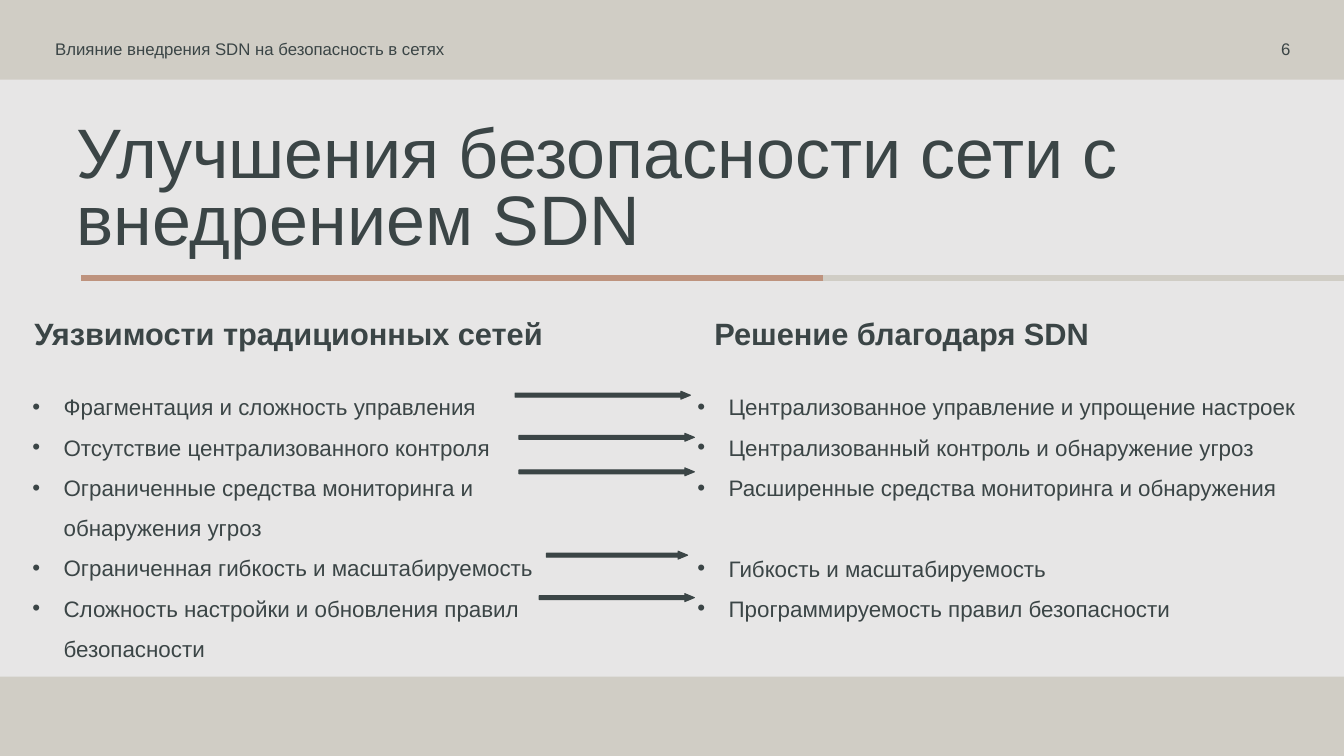
from lxml import etree
from pptx import Presentation
from pptx import util as u
from pptx.dml import color
from pptx.enum import shapes, text
from pptx.oxml import ns

INK, SAND, PAPER, CLAY = "3B4546", "D0CDC5", "E7E6E6", "BE937E"
FONT = "Arial"

RISKS = [
    "Фрагментация и сложность управления",
    "Отсутствие централизованного контроля",
    "Ограниченные средства мониторинга и обнаружения угроз",
    "Ограниченная гибкость и масштабируемость",
    "Сложность настройки и обновления правил безопасности",
]
SOLUTIONS = [
    "Централизованное управление и упрощение настроек",
    "Централизованный контроль и обнаружение угроз",
    "Расширенные средства мониторинга и обнаружения",
    "Гибкость и масштабируемость",
    "Программируемость правил безопасности",
]
ARROWS = [
    (12.98, 9.86, 4.42),
    (13.08, 10.92, 4.42),
    (13.08, 11.79, 4.42),
    (13.77, 13.89, 3.56),
    (13.59, 14.96, 3.91),
]


def paint(fmt, hex_color):
    """Give a fill a solid colour."""
    fmt.solid()
    fmt.fore_color.rgb = color.RGBColor.from_string(hex_color)


def place(sp, left, top, width, height):
    """Move and size a shape, in centimetres."""
    sp.left, sp.top = u.Cm(left), u.Cm(top)
    sp.width, sp.height = u.Cm(width), u.Cm(height)


def write(p, words, size, bold=False, align=text.PP_ALIGN.LEFT, spacing=1.0, after=0):
    """Put one formatted run into a paragraph."""
    p.alignment, p.line_spacing = align, spacing
    p.space_before, p.space_after = u.Pt(0), u.Pt(after)
    r = p.add_run()
    r.text = words
    r.font.name, r.font.size, r.font.bold = FONT, u.Pt(size), bold
    paint(r.font.fill, INK)


def set_frame(sp, anchor):
    """Make a text frame wrap at a fixed size and return it."""
    tf = sp.text_frame
    tf.word_wrap = True
    tf.auto_size = text.MSO_AUTO_SIZE.NONE
    tf.vertical_anchor = anchor
    return tf


def add_bullet(p):
    """Give a paragraph a hanging round bullet."""
    pPr = p._p.get_or_add_pPr()
    pPr.set("marL", str(u.Cm(0.79)))
    pPr.set("indent", str(-u.Cm(0.79)))
    clr = etree.SubElement(pPr, ns.qn("a:buClr"))
    etree.SubElement(clr, ns.qn("a:srgbClr"), val=INK)
    etree.SubElement(pPr, ns.qn("a:buFont"), typeface=FONT)
    etree.SubElement(pPr, ns.qn("a:buChar"), char="•")


def fill_text(sp, box, words, size, **fmt):
    """Place a placeholder and write its single paragraph."""
    place(sp, *box)
    tf = set_frame(sp, text.MSO_ANCHOR.TOP)
    write(tf.paragraphs[0], words, size, **fmt)


def fill_list(sp, box, items, gaps=None):
    """Place a placeholder and write a bulleted list, with extra gaps by item index."""
    place(sp, *box)
    tf = set_frame(sp, text.MSO_ANCHOR.TOP)
    for i, item in enumerate(items):
        p = tf.paragraphs[0] if i == 0 else tf.add_paragraph()
        write(p, item, 16, spacing=1.5, after=(gaps or {}).get(i, 0))
        add_bullet(p)


def add_label(s, box, words, align):
    """Add a small header text box."""
    sp = s.shapes.add_textbox(*map(u.Cm, box))
    tf = set_frame(sp, text.MSO_ANCHOR.MIDDLE)
    write(tf.paragraphs[0], words, 12, align=align)


def add_block(s, kind, box, fill):
    """Add a filled preset shape without outline or shadow."""
    sp = s.shapes.add_shape(kind, *map(u.Cm, box))
    sp.shadow.inherit = False
    paint(sp.fill, fill)
    sp.line.fill.background()
    return sp


def add_rule(s, x1, x2, y, hex_color):
    """Add a thick horizontal line."""
    ln = s.shapes.add_connector(
        shapes.MSO_CONNECTOR.STRAIGHT, u.Cm(x1), u.Cm(y), u.Cm(x2), u.Cm(y))
    ln.line.width = u.Pt(4.5)
    paint(ln.line.fill, hex_color)
    etree.SubElement(ln._element.spPr, ns.qn("a:effectLst"))


def add_arrow(s, left, top, width):
    """Add a thin block arrow from a risk to its solution."""
    sp = add_block(s, shapes.MSO_SHAPE.RIGHT_ARROW, (left, top, width, 0.2), INK)
    sp.adjustments[0], sp.adjustments[1] = 0.5, 1.21
    paint(sp.line.fill, INK)
    sp.line.width = u.Pt(0.75)


def add_backdrop(s):
    """Draw the pale band and the two-colour rule behind the placeholders."""
    paint(s.background.fill, SAND)
    add_block(s, shapes.MSO_SHAPE.RECTANGLE, (0, 2.01, 33.87, 15.04), PAPER)
    add_rule(s, 33.87, 20.7, 7.01, SAND)
    add_rule(s, 20.75, 2.03, 7.01, CLAY)
    for ph in list(s.placeholders):
        s.shapes.element.append(ph.element)


def main():
    """Build the slide and save it."""
    prs = Presentation()
    prs.slide_width, prs.slide_height = u.Cm(33.87), u.Cm(19.05)
    s = prs.slides.add_slide(prs.slide_layouts.get_by_name("Comparison"))
    add_backdrop(s)

    title, left_head, left_list, right_head, right_list = s.placeholders
    fill_text(title, (1.68, 3.02, 29.21, 1.6),
              "Улучшения безопасности сети с внедрением SDN", 50, spacing=0.8)
    fill_text(left_head, (0.61, 7.8, 13.41, 1.37),
              "Уязвимости традиционных сетей", 22, bold=True)
    fill_text(right_head, (17.75, 7.8, 14.99, 1.37),
              "Решение благодаря SDN", 22, bold=True)
    fill_list(left_list, (0.56, 9.45, 13.56, 7.57), RISKS)
    fill_list(right_list, (17.32, 9.45, 15.85, 7.34), SOLUTIONS, gaps={2: 28.8})

    add_label(s, (1.14, 0.84, 11.28, 0.76),
              "Влияние внедрения SDN на безопасность в сетях", text.PP_ALIGN.LEFT)
    add_label(s, (28.12, 0.84, 4.65, 0.76), "6", text.PP_ALIGN.RIGHT)
    for arrow in ARROWS:
        add_arrow(s, *arrow)
    prs.save("out.pptx")


if __name__ == "__main__":
    main()
